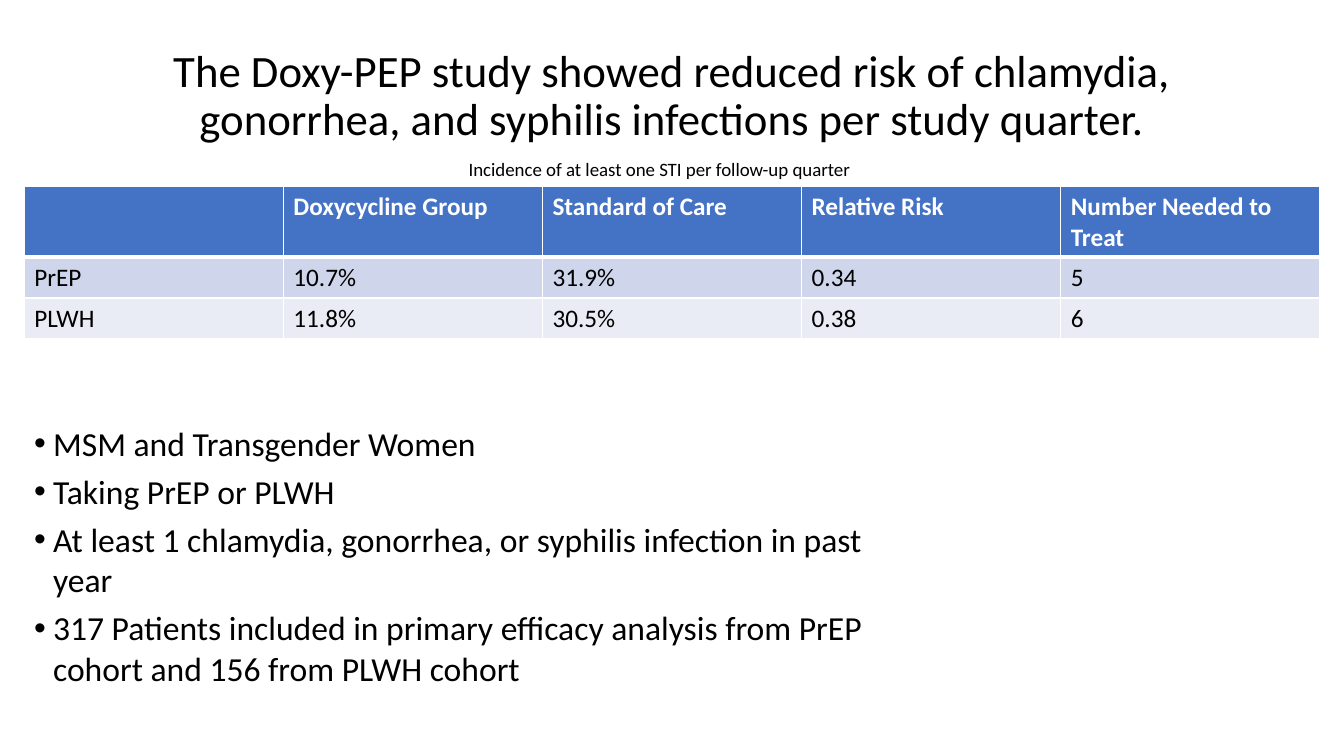
from lxml import etree
from pptx import Presentation
from pptx.dml.color import RGBColor
from pptx.enum.shapes import MSO_SHAPE
from pptx.enum.text import MSO_ANCHOR, MSO_AUTO_SIZE, PP_ALIGN
from pptx.oxml.ns import qn
from pptx.util import Cm, Pt

RECTANGLE = MSO_SHAPE.RECTANGLE
TOP, MIDDLE = MSO_ANCHOR.TOP, MSO_ANCHOR.MIDDLE
LEFT, CENTER = PP_ALIGN.LEFT, PP_ALIGN.CENTER
NO_AUTOFIT = MSO_AUTO_SIZE.NONE
TITLE_ONLY = 5

COLORS = {
    "text": "000000",
    "white": "FFFFFF",
    "header": "4472C4",
    "odd_row": "CFD5EA",
    "even_row": "E9EBF5",
}

TITLE = ("The Doxy-PEP study showed reduced risk of chlamydia, "
         "gonorrhea, and syphilis infections per study quarter.\v")
CAPTION = "Incidence of at least one STI per follow-up quarter"
INCIDENCE = [
    ["", "Doxycycline Group", "Standard of Care", "Relative Risk", "Number Needed to Treat"],
    ["PrEP", "10.7%", "31.9%", "0.34", "5"],
    ["PLWH", "11.8%", "30.5%", "0.38", "6"],
]
POPULATION = [
    "MSM and Transgender Women",
    "Taking PrEP or PLWH",
    "At least 1 chlamydia, gonorrhea, or syphilis infection in past year",
    "317 Patients included in primary efficacy analysis from PrEP cohort and 156 from PLWH cohort",
]


def rgb(name):
    return RGBColor.from_string(COLORS[name])


class SlideBuilder:
    """Holds the style and the current slide."""

    font_name = "Calibri"
    space_after = Pt(5.6)
    bullet_indent = Cm(0.48)

    def __init__(self, presentation):
        self.slide = presentation.slides.add_slide(presentation.slide_layouts[TITLE_ONLY])

    def style(self, paragraph, size, color="text", bold=False, align=LEFT):
        paragraph.alignment = align
        font = paragraph.font
        font.name, font.size, font.bold = self.font_name, Pt(size), bold
        font.color.rgb = rgb(color)

    def title(self, text, left, top, width, height):
        shape = self.slide.shapes.title
        shape.left, shape.top, shape.width, shape.height = map(Cm, (left, top, width, height))
        frame = shape.text_frame
        frame.text = text
        frame.word_wrap, frame.auto_size = True, NO_AUTOFIT
        frame.vertical_anchor = MIDDLE
        paragraph = frame.paragraphs[0]
        paragraph.line_spacing = 0.9
        self.style(paragraph, 32, align=CENTER)

    def caption(self, text, left, top, width, height):
        box = self.slide.shapes.add_textbox(*map(Cm, (left, top, width, height)))
        frame = box.text_frame
        frame.word_wrap = True
        frame.text = text
        frame.paragraphs[0].space_after = self.space_after
        self.style(frame.paragraphs[0], 13.5)

    def bullets(self, items, left, top, width, height):
        shape = self.slide.shapes.add_shape(RECTANGLE, *map(Cm, (left, top, width, height)))
        shape.shadow.inherit = False
        shape.fill.solid()
        shape.fill.fore_color.rgb = rgb("white")
        shape.line.fill.background()
        frame = shape.text_frame
        frame.word_wrap = True
        frame.vertical_anchor = TOP
        for index, item in enumerate(items):
            paragraph = frame.add_paragraph() if index else frame.paragraphs[0]
            paragraph.text = item
            paragraph.space_after = self.space_after
            properties = paragraph._p.get_or_add_pPr()
            properties.set("marL", str(self.bullet_indent))
            properties.set("indent", str(-self.bullet_indent))
            etree.SubElement(properties, qn("a:buFont"), typeface="Arial")
            etree.SubElement(properties, qn("a:buChar"), char="•")
            self.style(paragraph, 24)

    def borders(self, cell, top, bottom):
        properties = cell._tc.get_or_add_tcPr()
        for side, points in (("L", 1), ("R", 1), ("T", top), ("B", bottom)):
            line = etree.SubElement(properties, qn(f"a:ln{side}"), w=str(Pt(points)))
            fill = etree.SubElement(line, qn("a:solidFill"))
            etree.SubElement(fill, qn("a:srgbClr"), val=COLORS["white"])

    def table(self, rows, left, top, column_width, row_heights):
        table = self.slide.shapes.add_table(
            len(rows), len(rows[0]), Cm(left), Cm(top),
            Cm(column_width * len(rows[0])), Cm(sum(row_heights))).table
        for column in table.columns:
            column.width = Cm(column_width)
        fills = ("header", "odd_row", "even_row")
        for row_index, (values, height) in enumerate(zip(rows, row_heights)):
            table.rows[row_index].height = Cm(height)
            is_header = row_index == 0
            for column_index, value in enumerate(values):
                cell = table.cell(row_index, column_index)
                cell.text = value
                # The rule under the header is heavier than the others
                self.borders(cell, top=3 if row_index == 1 else 1, bottom=3 if is_header else 1)
                cell.fill.solid()
                cell.fill.fore_color.rgb = rgb(fills[row_index])
                self.style(cell.text_frame.paragraphs[0], 18,
                           "white" if is_header else "text", bold=is_header)


def main():
    presentation = Presentation()
    presentation.slide_width, presentation.slide_height = Cm(33.87), Cm(19.05)
    builder = SlideBuilder(presentation)

    # Heading
    builder.title(TITLE, 2.33, 1.55, 29.21, 3.15)

    # Study population
    builder.bullets(POPULATION, 0.61, 10.52, 21.69, 7.37)

    # Incidence table with its caption
    builder.caption(CAPTION, 11.56, 3.86, 10.74, 0.84)
    builder.table(INCIDENCE, 0.61, 4.7, 6.53, [1.78, 1.03, 1.03])

    presentation.save("out.pptx")


if __name__ == "__main__":
    main()
